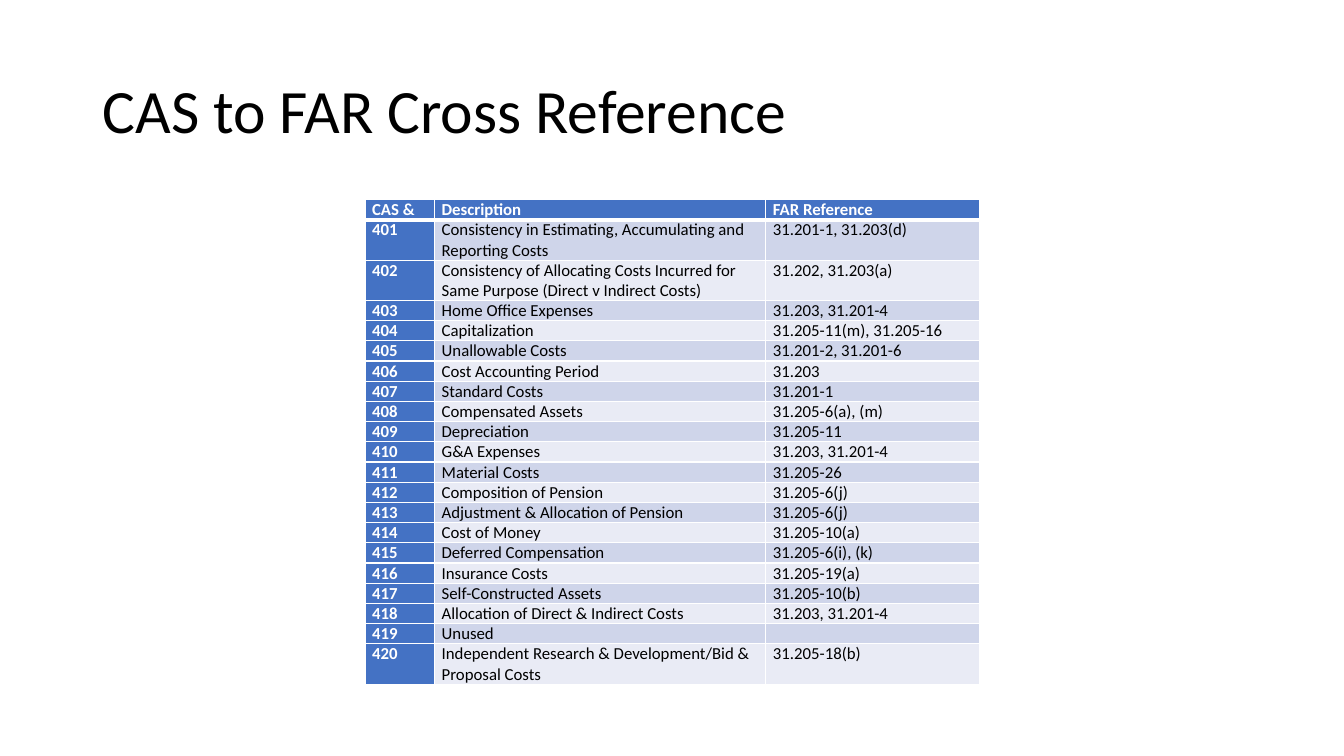
"""Build the CAS to FAR cross reference slide."""
from lxml import etree
from pptx import Presentation
from pptx.dml.color import RGBColor
from pptx.enum.text import MSO_ANCHOR
from pptx.oxml.ns import qn
from pptx.util import Inches, Pt

MIDDLE = MSO_ANCHOR.MIDDLE
BLACK = RGBColor(0x00, 0x00, 0x00)
WHITE = RGBColor(0xFF, 0xFF, 0xFF)
BLUE = RGBColor(0x44, 0x72, 0xC4)
BAND_DARK = RGBColor(0xCF, 0xD5, 0xEA)
BAND_LIGHT = RGBColor(0xE9, 0xEB, 0xF5)
FONT = "Calibri"
LINE_HEIGHT = 0.2
COLUMN_SHARES = (0.69, 3.28, 2.12)
TWO_LINE_STANDARDS = ("401", "402", "420")

STANDARDS = [
    ("CAS &", "Description", "FAR Reference"),
    ("401", "Consistency in Estimating, Accumulating and Reporting Costs", "31.201-1, 31.203(d)"),
    ("402", "Consistency of Allocating Costs Incurred for Same Purpose (Direct v Indirect Costs)",
     "31.202, 31.203(a)"),
    ("403", "Home Office Expenses", "31.203, 31.201-4"),
    ("404", "Capitalization", "31.205-11(m), 31.205-16"),
    ("405", "Unallowable Costs", "31.201-2, 31.201-6"),
    ("406", "Cost Accounting Period", "31.203"),
    ("407", "Standard Costs", "31.201-1"),
    ("408", "Compensated Assets", "31.205-6(a), (m)"),
    ("409", "Depreciation", "31.205-11"),
    ("410", "G&A Expenses", "31.203, 31.201-4"),
    ("411", "Material Costs", "31.205-26"),
    ("412", "Composition of Pension", "31.205-6(j)"),
    ("413", "Adjustment & Allocation of Pension", "31.205-6(j)"),
    ("414", "Cost of Money", "31.205-10(a)"),
    ("415", "Deferred Compensation", "31.205-6(i), (k)"),
    ("416", "Insurance Costs", "31.205-19(a)"),
    ("417", "Self-Constructed Assets", "31.205-10(b)"),
    ("418", "Allocation of Direct & Indirect Costs", "31.203, 31.201-4"),
    ("419", "Unused", ""),
    ("420", "Independent Research & Development/Bid & Proposal Costs", "31.205-18(b)"),
]


def set_font(paragraph, size, color, bold=False):
    """Set the paragraph's font."""
    font = paragraph.font
    font.name, font.size, font.bold = FONT, Pt(size), bold
    font.color.rgb = color


def set_borders(cell, widths):
    """Draw white borders, given as a width in points for each side."""
    properties = cell._tc.get_or_add_tcPr()
    for position, (side, width) in enumerate(widths.items()):
        border = etree.Element(qn(f"a:ln{side}"), w=str(Pt(width)))
        fill = etree.SubElement(border, qn("a:solidFill"))
        etree.SubElement(fill, qn("a:srgbClr"), val=str(WHITE))
        properties.insert(position, border)


def fill_cell(cell, text, row, column):
    """Write and style one cell by its place in the table."""
    is_heading = row == 0 or column == 0
    cell.margin_left = cell.margin_right = Inches(0.07)
    cell.margin_top = cell.margin_bottom = 0
    cell.fill.solid()
    cell.fill.fore_color.rgb = BLUE if is_heading else (BAND_LIGHT, BAND_DARK)[row % 2]
    paragraph = cell.text_frame.paragraphs[0]
    if text:
        paragraph.text = text
    else:
        etree.SubElement(paragraph._p, qn("a:endParaRPr"), sz="1200")
    set_font(paragraph, 12, WHITE if is_heading else BLACK, is_heading)
    set_borders(cell, {"L": 1, "R": 1, "T": 3 if row == 1 else 1, "B": 3 if row == 0 else 1})


def add_title(slide, left, top, width, height):
    """Place the slide title in its box."""
    frame = slide.shapes.add_textbox(
        Inches(left), Inches(top), Inches(width), Inches(height)).text_frame
    frame.word_wrap = True
    frame.vertical_anchor = MIDDLE
    title = frame.paragraphs[0]
    title.text = "CAS to FAR Cross Reference"
    title.line_spacing = 0.9
    set_font(title, 44, BLACK)


def add_cross_reference(slide, left, top, width, height):
    """Place the table of standards in its box."""
    table = slide.shapes.add_table(
        len(STANDARDS), len(COLUMN_SHARES),
        Inches(left), Inches(top), Inches(width), Inches(height)).table
    table.first_col = True
    for column, share in zip(table.columns, COLUMN_SHARES):
        column.width = Inches(width * share / sum(COLUMN_SHARES))
    for row, standard in enumerate(STANDARDS):
        lines = 2 if standard[0] in TWO_LINE_STANDARDS else 1
        table.rows[row].height = Inches(LINE_HEIGHT * lines)
        for column, text in enumerate(standard):
            fill_cell(table.cell(row, column), text, row, column)


def main():
    """Build and save the presentation."""
    presentation = Presentation()
    presentation.slide_width = Inches(13.33)
    presentation.slide_height = Inches(7.5)
    slide = presentation.slides.add_slide(presentation.slide_layouts[6])
    add_title(slide, 0.92, 0.4, 11.5, 1.45)
    add_cross_reference(slide, 3.62, 1.98, 6.1, 4.8)
    presentation.save("out.pptx")


if __name__ == "__main__":
    main()
